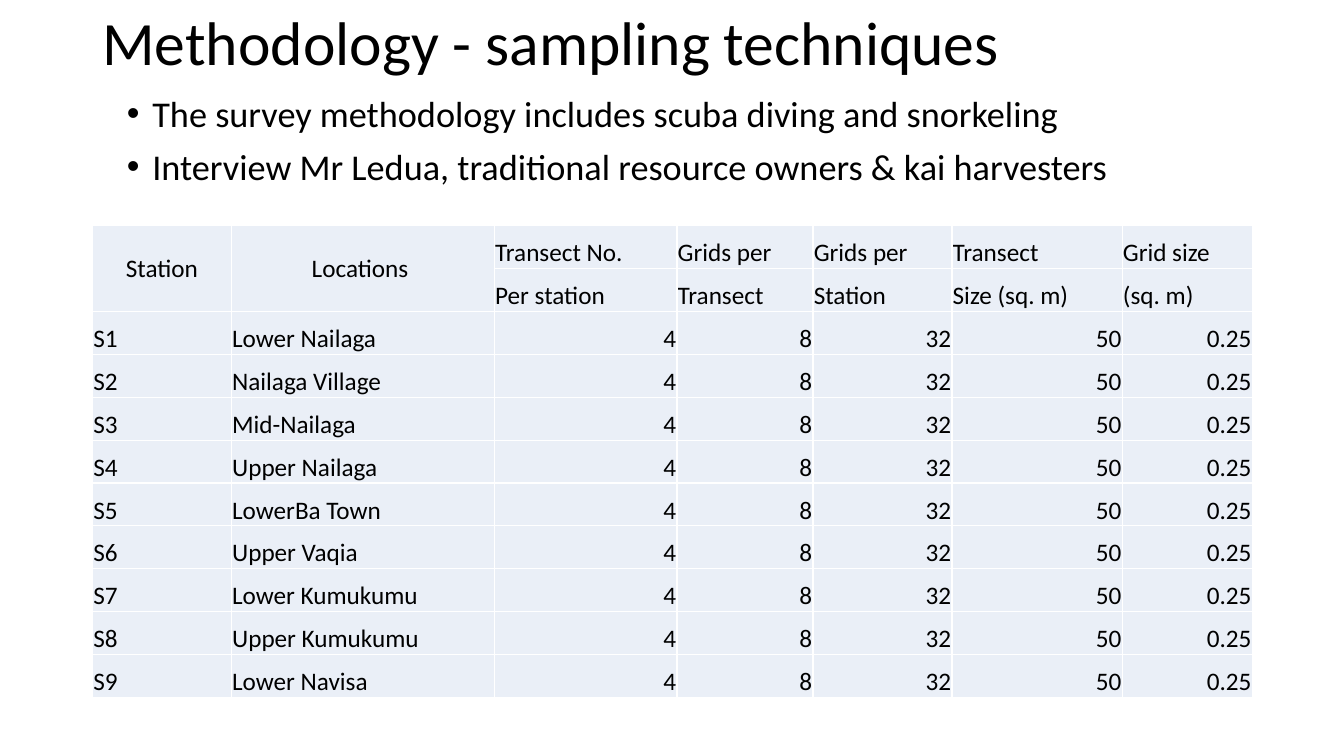
from lxml.etree import SubElement
from pptx import Presentation
from pptx.dml.color import RGBColor
from pptx.enum.text import MSO_ANCHOR, PP_ALIGN
from pptx.oxml.ns import qn
from pptx.util import Cm, Pt

BLACK = RGBColor(0x00, 0x00, 0x00)
WHITE = RGBColor(0xFF, 0xFF, 0xFF)
PALE_BLUE = RGBColor(0xEA, 0xEF, 0xF7)

COLUMN_WIDTHS = [3.5, 6.63, 4.6, 3.43, 3.5, 4.29, 3.28]
ROW_HEIGHT = 1.08
HEADERS = [
    ["Station", "Locations ", "Transect No.", "Grids per", "Grids per", "Transect", "Grid size"],
    ["", "", "Per station", "Transect", "Station", "Size (sq. m)", "(sq. m)"],
]
LOCATIONS = [
    "Lower Nailaga", "Nailaga Village", "Mid-Nailaga", "Upper Nailaga", "LowerBa Town",
    "Upper Vaqia", "Lower Kumukumu", "Upper Kumukumu", "Lower Navisa",
]
SAMPLING = ["4", "8", "32", "50", "0.25"]
BULLETS = [
    "The survey methodology includes scuba diving and snorkeling",
    "Interview Mr Ledua, traditional resource owners & kai harvesters",
]


class SlideBuilder:
    font = "Calibri"
    color = BLACK

    def __init__(self, slide):
        self.slide = slide

    def run(self, p, text, size):
        r = p.add_run()
        r.text = text
        r.font.name = self.font
        r.font.size = Pt(size)
        r.font.color.rgb = self.color

    def text(self, box, lines, size, anchor=MSO_ANCHOR.TOP, bullets=False):
        tf = self.slide.shapes.add_textbox(*map(Cm, box)).text_frame
        tf.word_wrap = True
        tf.vertical_anchor = anchor
        for i, line in enumerate(lines):
            p = tf.paragraphs[0] if i == 0 else tf.add_paragraph()
            p.line_spacing = 0.9
            if bullets:
                p.space_before = Pt(10)
                self.bullet(p)
            self.run(p, line, size)

    def bullet(self, p):
        pPr = p._p.get_or_add_pPr()
        indent = Cm(0.64)
        pPr.set("marL", str(indent))
        pPr.set("indent", str(-indent))
        SubElement(pPr, qn("a:buFont"), typeface="Arial")
        SubElement(pPr, qn("a:buChar"), char="•")

    def borders(self, cell):
        tcPr = cell._tc.get_or_add_tcPr()
        for i, side in enumerate(("a:lnL", "a:lnR", "a:lnT", "a:lnB")):
            ln = tcPr.makeelement(qn(side), {"w": str(Pt(1))})
            fill = SubElement(ln, qn("a:solidFill"))
            SubElement(fill, qn("a:srgbClr"), val=str(WHITE))
            tcPr.insert(i, ln)

    def cell(self, cell, text, align, anchor):
        cell.fill.solid()
        cell.fill.fore_color.rgb = PALE_BLUE
        cell.margin_left = cell.margin_right = cell.margin_top = Cm(0.02)
        cell.margin_bottom = 0
        cell.vertical_anchor = anchor
        self.borders(cell)
        p = cell.text_frame.paragraphs[0]
        p.alignment = align
        if text:
            self.run(p, text, 18)

    def table(self, left, top, rows, header_rows, label_columns):
        size = Cm(sum(COLUMN_WIDTHS)), Cm(ROW_HEIGHT * len(rows))
        frame = self.slide.shapes.add_table(
            len(rows), len(COLUMN_WIDTHS), Cm(left), Cm(top), *size)
        table = frame.table
        table.first_row = table.horz_banding = False
        for column, width in zip(table.columns, COLUMN_WIDTHS):
            column.width = Cm(width)
        for i, values in enumerate(rows):
            table.rows[i].height = Cm(ROW_HEIGHT)
            for j, value in enumerate(values):
                align, anchor = PP_ALIGN.LEFT, MSO_ANCHOR.BOTTOM
                if i < header_rows and j < label_columns:
                    align, anchor = PP_ALIGN.CENTER, MSO_ANCHOR.MIDDLE
                elif i >= header_rows and j >= label_columns:
                    align = PP_ALIGN.RIGHT
                self.cell(table.cell(i, j), value, align, anchor)
        for j in range(label_columns):
            table.cell(0, j).merge(table.cell(header_rows - 1, j))


def main():
    prs = Presentation()
    prs.slide_width, prs.slide_height = Cm(33.87), Cm(19.05)
    s = SlideBuilder(prs.slides.add_slide(prs.slide_layouts[6]))
    stations = [[f"S{n}", place, *SAMPLING] for n, place in enumerate(LOCATIONS, 1)]
    s.text((2.33, 0, 29.21, 2.29), ["Methodology - sampling techniques"], 44,
           anchor=MSO_ANCHOR.MIDDLE)
    s.table(2.33, 5.69, HEADERS + stations, header_rows=2, label_columns=2)
    s.text((2.95, 2.29, 27.1, 3.07), BULLETS, 25.9, bullets=True)
    prs.save("out.pptx")


if __name__ == "__main__":
    main()
